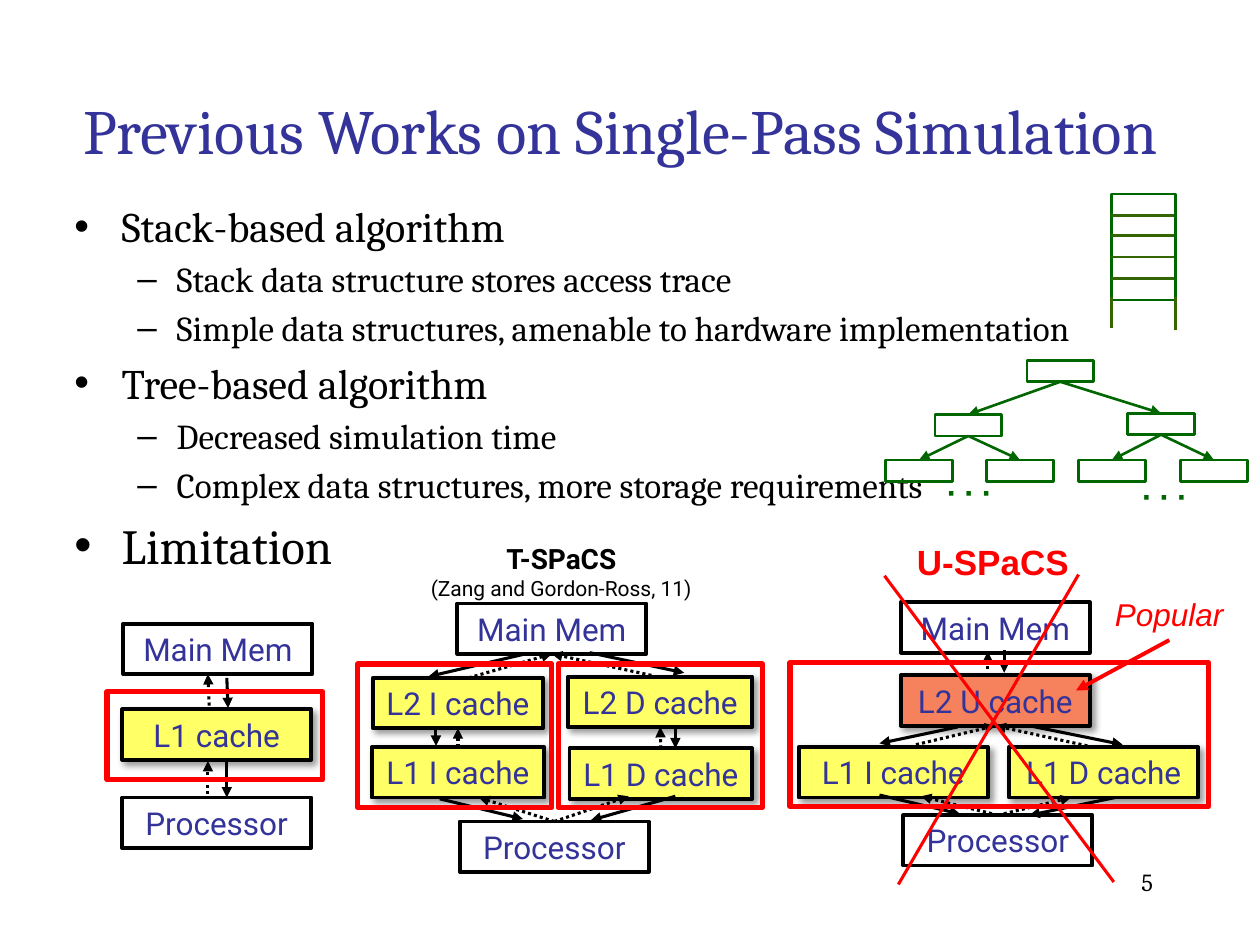
import pptx
import pptx.util
import pptx.dml.color
import pptx.enum.dml
import pptx.enum.shapes
import pptx.enum.text
import pptx.oxml
import pptx.oxml.ns

Inches, Pt = pptx.util.Inches, pptx.util.Pt
Align = pptx.enum.text.PP_ALIGN
Anchor = pptx.enum.text.MSO_ANCHOR
TOP, BOTTOM = 0, 2

COLORS = {
    "ink": "000000", "blue": "333399", "green": "006600", "moss": "336600",
    "red": "FF0000", "yellow": "FFFF66", "coral": "F5815D",
}


def color(name):
    return pptx.dml.color.RGBColor.from_string(COLORS[name])


def element(tag, **attrs):
    node = pptx.oxml.parse_xml(f"<a:{tag} {pptx.oxml.ns.nsdecls('a')}/>")
    for key, value in attrs.items():
        node.set(key, str(value))
    return node


class Deck:
    def __init__(self):
        self.prs = pptx.Presentation()
        self.prs.slide_width, self.prs.slide_height = Inches(10), Inches(7.5)
        self.slide = self.prs.slides.add_slide(self.prs.slide_layouts[1])
        self.shapes = self.slide.shapes

    def run(self, par, text, size, font, tint="ink", bold=False, italic=False):
        run = par.add_run()
        run.text = text
        run.font.name, run.font.size = font, Pt(size)
        run.font.bold, run.font.italic = bold, italic
        run.font.color.rgb = color(tint)

    def place(self, shape, left, top, width, height):
        shape.left, shape.top = Inches(left), Inches(top)
        shape.width, shape.height = Inches(width), Inches(height)

    def title(self, at, text):
        shape = self.shapes.title
        self.place(shape, *at)
        shape.text_frame.vertical_anchor = Anchor.MIDDLE
        par = shape.text_frame.paragraphs[0]
        par.alignment = Align.CENTER
        self.run(par, text, 36, "Cambria", "blue")

    def bullets(self, at, items):
        shape = self.slide.placeholders[1]
        self.place(shape, *at)
        frame = shape.text_frame
        frame.auto_size = pptx.enum.text.MSO_AUTO_SIZE.NONE
        for i, (level, size, text) in enumerate(items):
            par = frame.add_paragraph() if i else frame.paragraphs[0]
            par.level = level
            if not i:
                par.space_before = Pt(0)
            self.run(par, text, size, "Cambria")

    def text(self, at, *lines, align=Align.CENTER, anchor=Anchor.TOP, turn=0):
        shape = self.shapes.add_textbox(*map(Inches, at))
        shape.rotation = turn
        frame = shape.text_frame
        frame.word_wrap, frame.vertical_anchor = True, anchor
        for i, style in enumerate(lines):
            par = frame.add_paragraph() if i else frame.paragraphs[0]
            par.alignment = align
            self.run(par, **style)

    def rect(self, left, top, width, height, line="ink", weight=2.25, fill=None):
        kind = pptx.enum.shapes.MSO_SHAPE.RECTANGLE
        shape = self.shapes.add_shape(kind, *map(Inches, (left, top, width, height)))
        shape.shadow.inherit = False
        if fill:
            shape.fill.solid()
            shape.fill.fore_color.rgb = color(fill)
        else:
            shape.fill.background()
        shape.line.color.rgb, shape.line.width = color(line), Pt(weight)
        return shape

    def box(self, label, left, top, width=1.5, fill=None):
        shape = self.rect(left, top, width, 0.4, fill=fill)
        if fill:
            shade = element("outerShdw", blurRad=Pt(4), dist=Pt(3), dir=45 * 60000)
            tint = element("srgbClr", val=COLORS["ink"])
            tint.append(element("alpha", val=40000))
            shade.append(tint)
            shape._element.spPr.find(pptx.oxml.ns.qn("a:effectLst")).append(shade)
        frame = shape.text_frame
        frame.word_wrap, frame.vertical_anchor = True, Anchor.MIDDLE
        frame.paragraphs[0].alignment = Align.CENTER
        self.run(frame.paragraphs[0], label, 18, "Roboto", "blue")
        return shape

    def line(self, start, end, tint="ink", weight=1.75, dots=False, head=True):
        """Each end is an (x, y) point or a (shape, side) pair."""
        def point(spot):
            return (0, 0) if hasattr(spot[0], "left") else map(Inches, spot)

        kind = pptx.enum.shapes.MSO_CONNECTOR.STRAIGHT
        link = self.shapes.add_connector(kind, *point(start), *point(end))
        for spot, join in ((start, link.begin_connect), (end, link.end_connect)):
            if hasattr(spot[0], "left"):
                join(*spot)
        link.line.color.rgb, link.line.width = color(tint), Pt(weight)
        if dots:
            link.line.dash_style = pptx.enum.dml.MSO_LINE.ROUND_DOT
        if head:
            link.line._get_or_add_ln().append(element("tailEnd", type="triangle"))
        link._element.spPr.append(element("effectLst"))

    def lines(self, solid, dotted):
        for pairs, dots in ((solid, False), (dotted, True)):
            for start, end in pairs:
                self.line(start, end, dots=dots)

    def curve(self, start, arcs, tint, weight, steps=10):
        spots, last = [], start
        for one, two, end in arcs:
            for i in range(1, steps + 1):
                t = i / steps
                u = 1 - t
                spots.append([u**3 * a + 3 * u * u * t * b + 3 * u * t * t * c + t**3 * d
                              for a, b, c, d in zip(last, one, two, end)])
            last = end
        form = self.shapes.build_freeform(*start, scale=Inches(1))
        form.add_line_segments(spots, close=False)
        shape = form.convert_to_shape()
        shape.shadow.inherit = False
        shape.fill.background()
        shape.line.color.rgb, shape.line.width = color(tint), Pt(weight)


def main():
    deck = Deck()
    deck.title((0.27, 0.4, 9.31, 1.25), "Previous Works on Single-Pass Simulation")
    deck.bullets((0.49, 1.54, 8.5, 5.07), [
        (0, 24, "Stack-based algorithm"),
        (1, 20, "Stack data structure stores access trace"),
        (1, 20, "Simple data structures, amenable to hardware implementation"),
        (0, 24, "Tree-based algorithm"),
        (1, 20, "Decreased simulation time"),
        (1, 20, "Complex data structures, more storage requirements"),
        (0, 28, "Limitation"),
    ])
    deck.text((7.17, 6.83, 2.08, 0.5), dict(text="5", size=14, font="Cambria"),
              align=Align.RIGHT)

    # Stack with a torn lower edge
    deck.rect(8.82, 1.54, 0.51, 0.84, "green", 1.5)
    rows = [((8.82, y), (9.32, y)) for y in (1.71, 1.87, 2.04, 2.21)]
    sides = [((8.82, 2.36), (8.82, 2.6)), ((9.33, 2.36), (9.33, 2.62))]
    for start, end in rows + sides:
        deck.line(start, end, "moss", 1.5, head=False)
    deck.curve((8.82, 2.6), [
        ((8.87, 2.63), (8.93, 2.66), (8.98, 2.66)),
        ((9.02, 2.66), (9.06, 2.63), (9.1, 2.61)),
        ((9.13, 2.59), (9.16, 2.56), (9.2, 2.56)),
        ((9.23, 2.56), (9.32, 2.61), (9.32, 2.61)),
    ], "moss", 1.5)

    # Binary tree: node i hangs from node (i - 1) // 2
    spots = [(8.15, 2.86), (7.42, 3.29), (8.95, 3.28),
             (7.03, 3.65), (7.83, 3.65), (8.56, 3.65), (9.37, 3.65)]
    nodes = [deck.rect(x, y, 0.53, 0.17, "green", 1.5) for x, y in spots]
    for i in range(1, len(nodes)):
        deck.line((nodes[(i - 1) // 2], BOTTOM), (nodes[i], TOP), "green", 1.5)
    for x, y in ((8.34, 3.83), (6.79, 3.8)):
        deck.text((x, y, 1.17, 0.4), turn=180, align=Align.LEFT, *[
            dict(text=". . .", size=18, font="Arial", tint="green", bold=True)])

    # Single-level cache
    deck.box("Processor", 0.97, 6.33)
    deck.box("L1 cache", 0.97, 5.63, fill="yellow")
    deck.box("Main Mem", 0.98, 4.95)
    deck.lines([((1.8, 5.38), (1.81, 5.62)), ((1.8, 6.04), (1.8, 6.33))],
               [((1.66, 5.6), (1.65, 5.35)), ((1.65, 6.3), (1.65, 6.04))])
    deck.rect(0.85, 5.49, 1.71, 0.7, "red", 3)

    # T-SPaCS: split caches on both levels
    cpu = deck.box("Processor", 3.65, 6.52)
    mem = deck.box("Main Mem", 3.63, 4.79)
    inst1 = deck.box("L1 I cache", 2.95, 5.93, 1.37, "yellow")
    inst2 = deck.box("L2 I cache", 2.96, 5.38, 1.35, "yellow")
    data2 = deck.box("L2 D cache", 4.51, 5.37, 1.46, "yellow")
    data1 = deck.box("L1 D cache", 4.52, 5.94, 1.45, "yellow")
    deck.lines(
        [((4.17, 5.19), (3.4, 5.37)), ((4.68, 5.18), (5.43, 5.34)),
         ((3.46, 5.78), (3.46, 5.92)), ((5.36, 5.77), (5.36, 5.94)),
         ((3.49, 6.34), (4.15, 6.5)), ((5.36, 6.32), (4.69, 6.51))],
        [((3.72, 5.38), (mem, BOTTOM)), ((5.17, 5.36), (mem, BOTTOM)),
         ((inst1, TOP), (inst2, BOTTOM)), ((data1, TOP), (data2, BOTTOM)),
         ((cpu, TOP), (3.8, 6.33)), ((cpu, TOP), (4.99, 6.32))])
    for left, width in ((2.84, 1.54), (4.43, 1.62)):
        deck.rect(left, 5.27, width, 1.14, "red", 3)
    deck.text((2.81, 4.25, 3.29, 0.57),
              dict(text="T-SPaCS", size=16, font="Roboto", bold=True),
              dict(text="(Zang and Gordon-Ross, 11)", size=12, font="Roboto"))

    # U-SPaCS: unified second level
    cpu = deck.box("Processor", 7.17, 6.47)
    deck.box("Main Mem", 7.15, 4.78)
    deck.box("L1 I cache", 6.34, 5.93, fill="yellow")
    joint = deck.box("L2 U cache", 7.15, 5.36, fill="coral")
    deck.box("L1 D cache", 8.01, 5.93, fill="yellow")
    deck.lines(
        [((7.97, 5.16), (7.97, 5.34)), ((7.6, 5.77), (6.98, 5.9)),
         ((8.17, 5.76), (8.91, 5.91)), ((6.98, 6.31), (7.62, 6.46)),
         ((8.85, 6.33), (8.17, 6.47))],
        [((7.84, 5.31), (7.84, 5.17)), ((7.27, 5.91), (joint, BOTTOM)),
         ((8.63, 5.92), (joint, BOTTOM)), ((cpu, TOP), (7.31, 6.32)),
         ((cpu, TOP), (8.5, 6.33))])
    deck.rect(6.27, 5.26, 3.32, 1.14, "red", 3)

    # Cross and red labels
    deck.line((8.56, 4.56), (7.13, 7.02), "red", head=False)
    deck.line((7.02, 4.57), (8.84, 7), "red", head=False)
    deck.text((8.56, 4.67, 1.44, 0.4), anchor=Anchor.MIDDLE, *[
        dict(text="Popular", size=18, font="Arial", tint="red", italic=True)])
    deck.line((9.28, 5.08), (8.54, 5.48), "red", 2.25)
    deck.text((7.16, 4.24, 1.44, 0.44), anchor=Anchor.MIDDLE, *[
        dict(text="U-SPaCS", size=20, font="Arial", tint="red", bold=True)])

    deck.prs.save("out.pptx")


if __name__ == "__main__":
    main()
